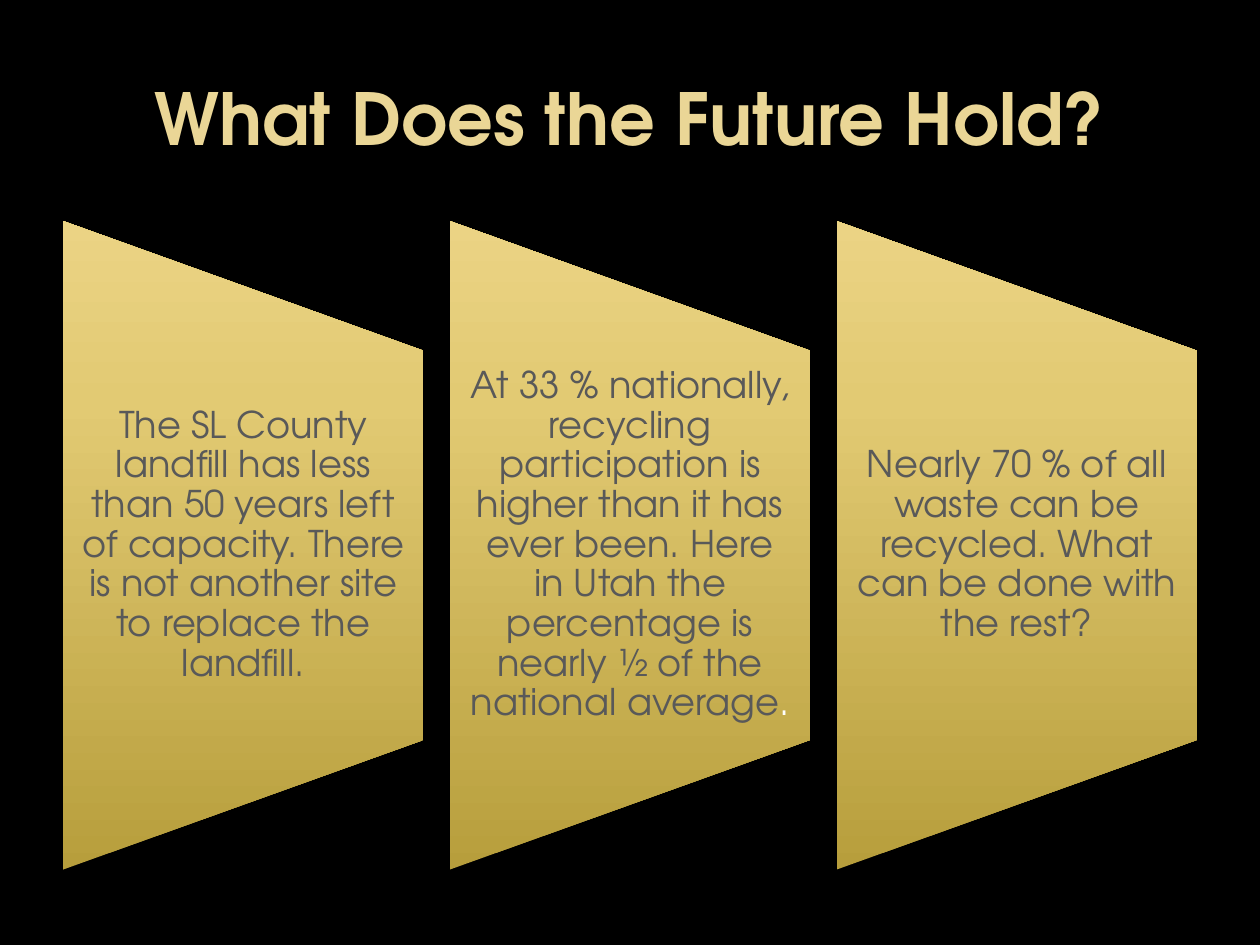
import pptx
import pptx.dml.color
import pptx.enum.shapes
import pptx.enum.text
import pptx.oxml
import pptx.oxml.ns
import pptx.util

Pt = pptx.util.Pt
FONT = "TeX Gyre Adventor"
GOLD = [(0, "B79E3C"), (72, "E2CA73"), (100, "EBD384")]
GREY, WHITE = "595959", "FFFFFF"
PANELS = [
    [("The SL County landfill has less than 50 years left of capacity. "
      "There is not another site to replace the landfill.", GREY)],
    [("At 33 % nationally, recycling participation is higher than it has ever been. "
      "Here in Utah the percentage is nearly ½ of the national average", GREY),
     (". ", WHITE)],
    [("Nearly 70 % of all waste can be recycled. What can be done with the rest?", GREY)],
]


def rgb(color):
    """Return the colour for a hex string."""
    return pptx.dml.color.RGBColor.from_string(color)


def add_text(s, runs, x, y, w, h, size, bold=False, spacing=1.0, insets=(7.2, 3.6, 7.2, 3.6)):
    """Add a centred text box made of (text, colour) runs."""
    tf = s.shapes.add_textbox(Pt(x), Pt(y), Pt(w), Pt(h)).text_frame
    tf.word_wrap = True
    tf.vertical_anchor = pptx.enum.text.MSO_ANCHOR.MIDDLE
    tf.margin_left, tf.margin_top, tf.margin_right, tf.margin_bottom = map(Pt, insets)
    p = tf.paragraphs[0]
    p.alignment = pptx.enum.text.PP_ALIGN.CENTER
    p.line_spacing = spacing
    for text, color in runs:
        r = p.add_run()
        r.text = text
        r.font.name, r.font.size, r.font.bold = FONT, Pt(size), bold
        r.font.color.rgb = rgb(color)


def fill_gradient(sp, stops, angle):
    """Fill a shape with a linear gradient that stays upright when the shape turns."""
    sp.fill.gradient()
    grad = sp._element.spPr.find(pptx.oxml.ns.qn("a:gradFill"))
    gs = "".join(f'<a:gs pos="{pos * 1000}"><a:srgbClr val="{color}"/></a:gs>'
                 for pos, color in stops)
    grad.getparent().replace(grad, pptx.oxml.parse_xml(
        f'<a:gradFill {pptx.oxml.ns.nsdecls("a")} rotWithShape="0"><a:gsLst>{gs}</a:gsLst>'
        f'<a:lin ang="{angle * 60000}" scaled="0"/></a:gradFill>'))


def add_panel(s, runs, x, y, w, h):
    """Draw a gold panel, narrower on its right side, with its text."""
    sp = s.shapes.add_shape(
        pptx.enum.shapes.MSO_SHAPE.FLOWCHART_MANUAL_OPERATION,
        Pt(x + (w - h) / 2), Pt(y + (h - w) / 2), Pt(h), Pt(w))
    sp.rotation = 270
    sp.shadow.inherit = False
    sp.line.fill.background()
    fill_gradient(sp, GOLD, 270)
    add_text(s, runs, x, y + h * 0.2, w, h * 0.6, 21, spacing=0.9, insets=(10.5, 0, 10.5, 0))


def add_panels(s, x, y, w, h, gap=15):
    """Lay the panels side by side across the box."""
    width = (w - gap * (len(PANELS) - 1)) / len(PANELS)
    for i, runs in enumerate(PANELS):
        add_panel(s, runs, x + i * (width + gap), y, width, h)


def main():
    """Build and save the slide."""
    prs = pptx.Presentation()
    prs.slide_width, prs.slide_height = Pt(720), Pt(540)
    s = prs.slides.add_slide(prs.slide_layouts[6])
    s.background.fill.solid()
    s.background.fill.fore_color.rgb = rgb("000000")
    add_text(s, [("What Does the Future Hold?", "EAD696")], 36, 21.6, 648, 90, 41, bold=True)
    add_panels(s, 36, 126.3, 648, 370.6)
    prs.save("out.pptx")


if __name__ == "__main__":
    main()
